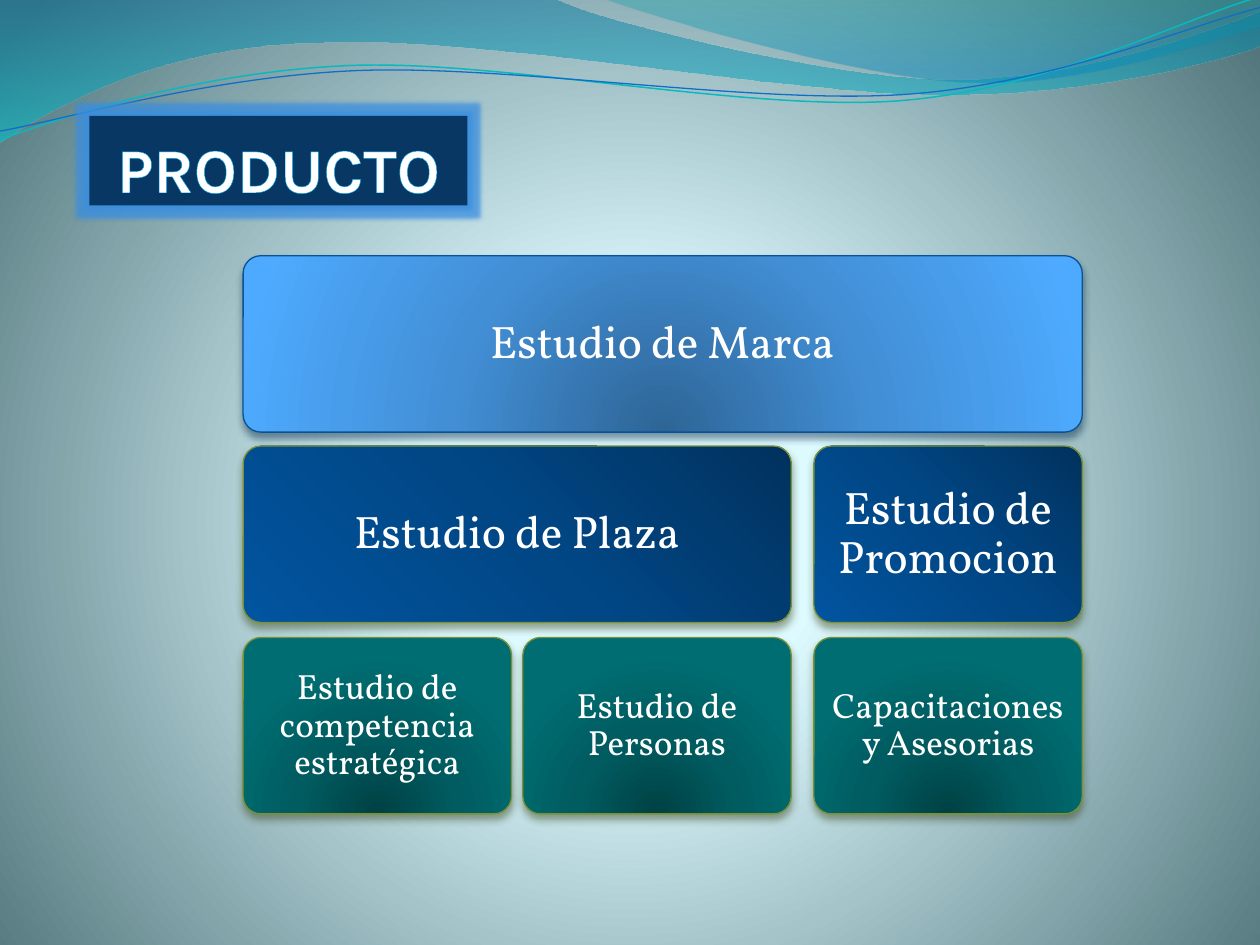
from math import cos, radians, sin

from lxml import etree
from pptx import Presentation
from pptx.dml.color import RGBColor
from pptx.enum.shapes import MSO_SHAPE
from pptx.enum.text import MSO_ANCHOR, PP_ALIGN
from pptx.oxml.ns import qn
from pptx.util import Inches, Pt

RECTANGLE, ROUNDED = MSO_SHAPE.RECTANGLE, MSO_SHAPE.ROUNDED_RECTANGLE
MIDDLE, BOTTOM = MSO_ANCHOR.MIDDLE, MSO_ANCHOR.BOTTOM
CENTER = PP_ALIGN.CENTER

BACKGROUND = [(0, "DEFBFF"), (25, "DDFAFF"), (100, "52767C")]
SKY = [(0, "2E6596"), (50, "428FD6"), (100, "4EAAFE")]
NAVY = [(0, "01325E"), (50, "014786"), (100, "01549F")]
TEAL = [(0, "004144"), (50, "005C60"), (100, "006D72")]
BOTTOM_CENTER, TOP_RIGHT = (50, 100, 50, 0), (100, 0, 0, 100)

WAVES = [
    ([(0, -0.01), (4.4, -0.01), (4.76, 0.17, 6.64, 0.63, 7.58, 0.63),
      (8.53, 0.63, 9.58, 0.26, 10, 0.09), (10.01, 0.36),
      (9.83, 0.44, 8.7, 0.76, 7.46, 0.75), (6.22, 0.75, 3.82, 0.28, 2.57, 0.34),
      (1.29, 0.35, 0.46, 0.83, -0.01, 1.13), (0, -0.01)],
     [(0, "0074A1", 45), (100, "00C6CF", 55)]),
    ([(4.79, -0.01), (5.09, 0.11, 6.82, 0.62, 7.69, 0.65),
      (8.56, 0.69, 9.61, 0.32, 10, 0.21), (10, 0), (4.79, -0.01)],
     [(0, "00A1A9", 30), (80, "008BBF", 45)]),
]
STRAND_TILT = -2.7
STRANDS = [
    ([(0, 1.11), (0.48, 0.93, 1.58, 0.57, 2.77, 0.52),
      (3.95, 0.47, 5.93, 0.89, 7.13, 0.8), (8.33, 0.71, 9.38, 0.15, 9.98, -0.02)],
     (4.99, 0.575), "0AB8BF", 0.85),
    ([(0, 1.04), (0.47, 0.96, 1.64, 0.61, 2.83, 0.56),
      (4.03, 0.51, 5.97, 0.83, 7.17, 0.75), (8.36, 0.67, 9.41, 0.21, 10, 0.06)],
     (4.99, 0.59), "0F6FC6", 0.75),
]

COLUMNS, ROW_TOPS = (1.93, 4.15, 6.46), (2.03, 3.54, 5.06)
BOX_WIDTH, BOX_HEIGHT = 2.13, 1.4
ROWS = [
    (SKY, BOTTOM_CENTER, "095295", "042747", 26, 0.07,
     [("Estudio de Marca", 0, 2)]),
    (NAVY, TOP_RIGHT, "7B9135", "3A4519", 26, 0.07,
     [("Estudio de Plaza", 0, 1), ("Estudio de Promocion", 2, 2)]),
    (TEAL, BOTTOM_CENTER, "7B9135", "3A4519", 20, 0.04,
     [("Estudio de competencia estratégica", 0, 0), ("Estudio de Personas", 1, 1),
      ("Capacitaciones y Asesorias", 2, 2)]),
]


def color(value):
    """Turn a hex string into a colour."""
    return RGBColor.from_string(value)


def add_node(parent, tag, **attributes):
    """Append a DrawingML element and return it."""
    return etree.SubElement(parent, qn("a:" + tag), {k: str(v) for k, v in attributes.items()})


def add_color(parent, value, alpha=100):
    """Append a colour with its opacity in percent."""
    node = add_node(parent, "srgbClr", val=value)
    if alpha < 100:
        add_node(node, "alpha", val=alpha * 1000)


def set_gradient(fill, owner, stops, focus=None):
    """Give a fill a radial gradient around focus, or a vertical one."""
    fill.gradient()
    gradient = next(owner.iter(qn("a:gradFill")))
    for child in list(gradient):
        gradient.remove(child)
    stop_list = add_node(gradient, "gsLst")
    for position, *stop in stops:
        add_color(add_node(stop_list, "gs", pos=position * 1000), *stop)
    if focus:
        sides = {side: value * 1000 for side, value in zip("ltrb", focus)}
        add_node(add_node(gradient, "path", path="circle"), "fillToRect", **sides)
    else:
        add_node(gradient, "lin", ang=5400000, scaled=0)


def add_effect(shape, tag, value, alpha, **attributes):
    """Add a shadow or a glow to a shape."""
    effects = shape.element.spPr.find(qn("a:effectLst"))
    add_color(add_node(effects, tag, **attributes), value, alpha)


def write_text(shape, text, size, font, bold=False, anchor=MIDDLE, margins=(0, 0, 0, 0), spacing=1.0):
    """Write centred white text into a shape and return its run."""
    frame = shape.text_frame
    frame.word_wrap = True
    frame.vertical_anchor = anchor
    frame.margin_left, frame.margin_top, frame.margin_right, frame.margin_bottom = map(Inches, margins)
    paragraph = frame.paragraphs[0]
    paragraph.alignment = CENTER
    paragraph.line_spacing = spacing
    run = paragraph.add_run()
    run.text = text
    run.font.size, run.font.name, run.font.bold = Pt(size), font, bold
    run.font.color.rgb = color("FFFFFF")
    return run


def turn(step, center, degrees):
    """Turn every point of a step clockwise about a center."""
    cosine, sine = cos(radians(degrees)), sin(radians(degrees))
    turned = []
    for x, y in zip(step[::2], step[1::2]):
        across, down = x - center[0], y - center[1]
        turned += [center[0] + across * cosine - down * sine,
                   center[1] + across * sine + down * cosine]
    return turned


class SlideBuilder:
    """Holds the style and the current slide."""

    title_font, body_font = "Karla", "Vollkorn"

    def __init__(self, slide):
        """Start on a slide and paint its background."""
        self.slide = slide
        set_gradient(slide.background.fill, slide.element, BACKGROUND, (10, 110, 10, 100))

    def outline(self, steps, close):
        """Add a freeform whose six-number steps are cubic curves."""
        start, *points = [(Inches(x), Inches(y)) for step in steps
                          for x, y in zip(step[::2], step[1::2])]
        builder = self.slide.shapes.build_freeform(*start)
        builder.add_line_segments(points, close=close)
        shape = builder.convert_to_shape()
        shape.shadow.inherit = False
        segments = iter(list(shape.element.iter(qn("a:lnTo"))))
        for step in steps[1:]:
            segment = next(segments)
            if len(step) == 6:
                curve = etree.Element(qn("a:cubicBezTo"))
                segment.addprevious(curve)
                for part in (segment, next(segments), next(segments)):
                    curve.append(part[0])
                    part.getparent().remove(part)
        return shape

    def wave(self, steps, stops):
        """Add a translucent wave."""
        shape = self.outline(steps, True)
        set_gradient(shape.fill, shape.element, stops)
        shape.line.fill.background()

    def strand(self, steps, center, value, width):
        """Add a thin tilted curve."""
        shape = self.outline([turn(step, center, -STRAND_TILT) for step in steps], False)
        shape.rotation = STRAND_TILT
        shape.fill.background()
        shape.line.color.rgb = color(value)
        shape.line.width = Pt(width)

    def block(self, kind, left, top, width, height):
        """Add a preset shape without inherited effects."""
        shape = self.slide.shapes.add_shape(kind, *map(Inches, (left, top, width, height)))
        shape.shadow.inherit = False
        return shape

    def title(self, text):
        """Add the glowing title plate."""
        shape = self.block(RECTANGLE, 0.71, 0.92, 3, 0.71)
        shape.fill.solid()
        shape.fill.fore_color.rgb = color("083763")
        shape.line.fill.background()
        add_effect(shape, "glow", "3A8EDF", 75, rad=Pt(5))
        run = write_text(shape, text, 36, self.title_font, bold=True, anchor=BOTTOM,
                         margins=(0, 0.05, 0, 0))
        properties = run.font._element
        line = add_node(properties, "ln", w=Pt(1.42))
        add_color(add_node(line, "solidFill"), "009DD9")
        properties.insert(0, line)

    def box(self, text, left, top, width, stops, focus, edge, shade, size, margin):
        """Add a rounded box with its label."""
        shape = self.block(ROUNDED, left, top, width, BOX_HEIGHT)
        shape.adjustments[0] = 0.1
        set_gradient(shape.fill, shape.element, stops, focus)
        shape.line.color.rgb = color(edge)
        shape.line.width = Pt(0.75)
        add_effect(shape, "outerShdw", shade, 48, blurRad=Pt(4.5), dist=Pt(3), dir=5400000,
                   rotWithShape=0)
        write_text(shape, text, size, self.body_font, margins=(margin,) * 4, spacing=0.9)


def main():
    """Build and save the slide."""
    presentation = Presentation()
    presentation.slide_width, presentation.slide_height = Inches(10), Inches(7.5)
    builder = SlideBuilder(presentation.slides.add_slide(presentation.slide_layouts[6]))
    for wave in WAVES:
        builder.wave(*wave)
    for strand in STRANDS:
        builder.strand(*strand)
    builder.title("PRODUCTO")
    for top, (*style, boxes) in zip(ROW_TOPS, ROWS):
        for text, first, last in boxes:
            width = COLUMNS[last] + BOX_WIDTH - COLUMNS[first]
            builder.box(text, COLUMNS[first], top, width, *style)
    presentation.save("out.pptx")


if __name__ == "__main__":
    main()
